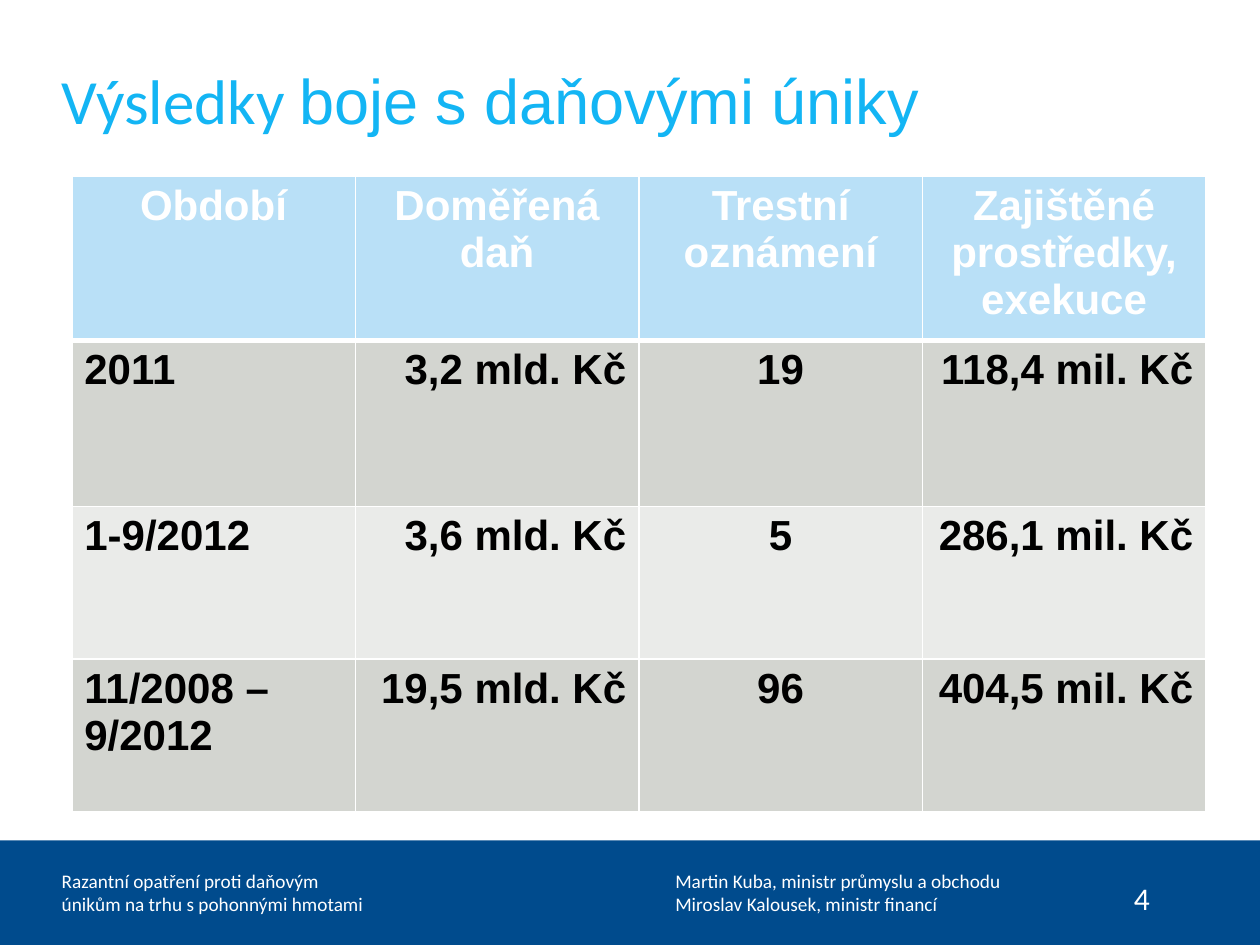
from lxml.etree import SubElement
from pptx import Presentation
from pptx.dml.color import RGBColor
from pptx.enum.shapes import MSO_SHAPE
from pptx.enum.text import MSO_ANCHOR, PP_ALIGN
from pptx.oxml.ns import qn
from pptx.util import Inches, Pt

COLORS = {
    "navy": "004B8D",
    "white": "FFFFFF",
    "title": "13B5F4",
    "header": "B9E0F7",
    "dark_band": "D3D5D0",
    "light_band": "EAEBE9",
    "text": "000000",
}
HEADER = ["Období", "Doměřená daň", "Trestní oznámení", "Zajištěné prostředky, exekuce"]
RESULTS = [
    ["2011", "3,2 mld. Kč", "19", "118,4 mil. Kč"],
    ["1-9/2012", "3,6 mld. Kč", "5", "286,1 mil. Kč"],
    ["11/2008 – 9/2012", "19,5 mld. Kč", "96", "404,5 mil. Kč"],
]
ALIGNMENTS = [PP_ALIGN.LEFT, PP_ALIGN.RIGHT, PP_ALIGN.CENTER, PP_ALIGN.RIGHT]
ROW_HEIGHTS = [1.21, 1.32, 1.21, 1.21]


def color(name):
    return RGBColor.from_string(COLORS[name])


class SlideBuilder:
    def __init__(self, slide):
        self.slide = slide

    def background(self, color_name):
        fill = self.slide.background.fill
        fill.solid()
        fill.fore_color.rgb = color(color_name)

    def rectangle(self, left, top, width, height, color_name):
        shape = self.slide.shapes.add_shape(
            MSO_SHAPE.RECTANGLE, Inches(left), Inches(top), Inches(width), Inches(height))
        shape.shadow.inherit = False
        shape.fill.solid()
        shape.fill.fore_color.rgb = color(color_name)
        shape.line.fill.background()

    def run(self, paragraph, text, size, color_name, font="Calibri", bold=False):
        run = paragraph.add_run()
        run.text = text
        run.font.name = font
        run.font.size = Pt(size)
        run.font.bold = bold
        run.font.color.rgb = color(color_name)

    def text(self, left, top, width, height, paragraphs, size, color_name="white", inset=False):
        """Add a text box; each paragraph is a list of (text, font) runs."""
        box = self.slide.shapes.add_textbox(
            Inches(left), Inches(top), Inches(width), Inches(height))
        frame = box.text_frame
        frame.word_wrap = True
        if not inset:
            frame.vertical_anchor = MSO_ANCHOR.MIDDLE
            frame.margin_left = frame.margin_right = 0
            frame.margin_top = frame.margin_bottom = 0
        for index, runs in enumerate(paragraphs):
            paragraph = frame.add_paragraph() if index else frame.paragraphs[0]
            for text, font in runs:
                self.run(paragraph, text, size, color_name, font)

    def border(self, cell, side, width):
        line = SubElement(cell._tc.get_or_add_tcPr(), qn(f"a:ln{side}"), w=str(Pt(width)))
        fill = SubElement(line, qn("a:solidFill"))
        SubElement(fill, qn("a:srgbClr"), val=COLORS["white"])

    def cell(self, cell, text, alignment, fill, text_color, top_border, bottom_border):
        for side, width in zip("LRTB", (1, 1, top_border, bottom_border)):
            self.border(cell, side, width)
        cell.fill.solid()
        cell.fill.fore_color.rgb = color(fill)
        paragraph = cell.text_frame.paragraphs[0]
        paragraph.alignment = alignment
        self.run(paragraph, text, 24, text_color, "Arial", bold=True)

    def table(self, left, top, width, row_heights, header, rows):
        table = self.slide.shapes.add_table(
            len(row_heights), len(header), Inches(left), Inches(top),
            Inches(width), Inches(sum(row_heights))).table
        for row, height in zip(table.rows, row_heights):
            row.height = Inches(height)
        for column, text in enumerate(header):
            self.cell(table.cell(0, column), text, PP_ALIGN.CENTER, "header", "white", 1, 3)
        for index, values in enumerate(rows, start=1):
            band = "dark_band" if index % 2 else "light_band"
            top_border = 3 if index == 1 else 1
            for column, text in enumerate(values):
                self.cell(table.cell(index, column), text, ALIGNMENTS[column],
                          band, "text", top_border, 1)


def main():
    presentation = Presentation()
    presentation.slide_width = Inches(10)
    presentation.slide_height = Inches(7.5)
    builder = SlideBuilder(presentation.slides.add_slide(presentation.slide_layouts[6]))

    builder.background("navy")
    builder.rectangle(0, 0, 10, 6.67, "white")
    builder.text(5.36, 6.67, 3.46, 0.83, [
        [("Martin Kuba, ministr průmyslu a obchodu", "Calibri")],
        [("Miroslav Kalousek, ministr financí", "Calibri")],
    ], 11)
    builder.text(0.49, 6.67, 2.43, 0.83, [
        [("Razantní opatření proti daňovým únikům na trhu s pohonnými hmotami", "Calibri")],
    ], 11)
    builder.text(8.9, 6.93, 0.5, 0.4, [[("4", "Calibri")]], 18, inset=True)
    builder.text(0.49, 0.49, 9.01, 0.6, [
        [("Výsledky ", "Calibri"), ("boje s daňovými úniky", "Arial")],
    ], 36, "title")
    builder.table(0.57, 1.4, 9, ROW_HEIGHTS, HEADER, RESULTS)
    presentation.save("out.pptx")


if __name__ == "__main__":
    main()
